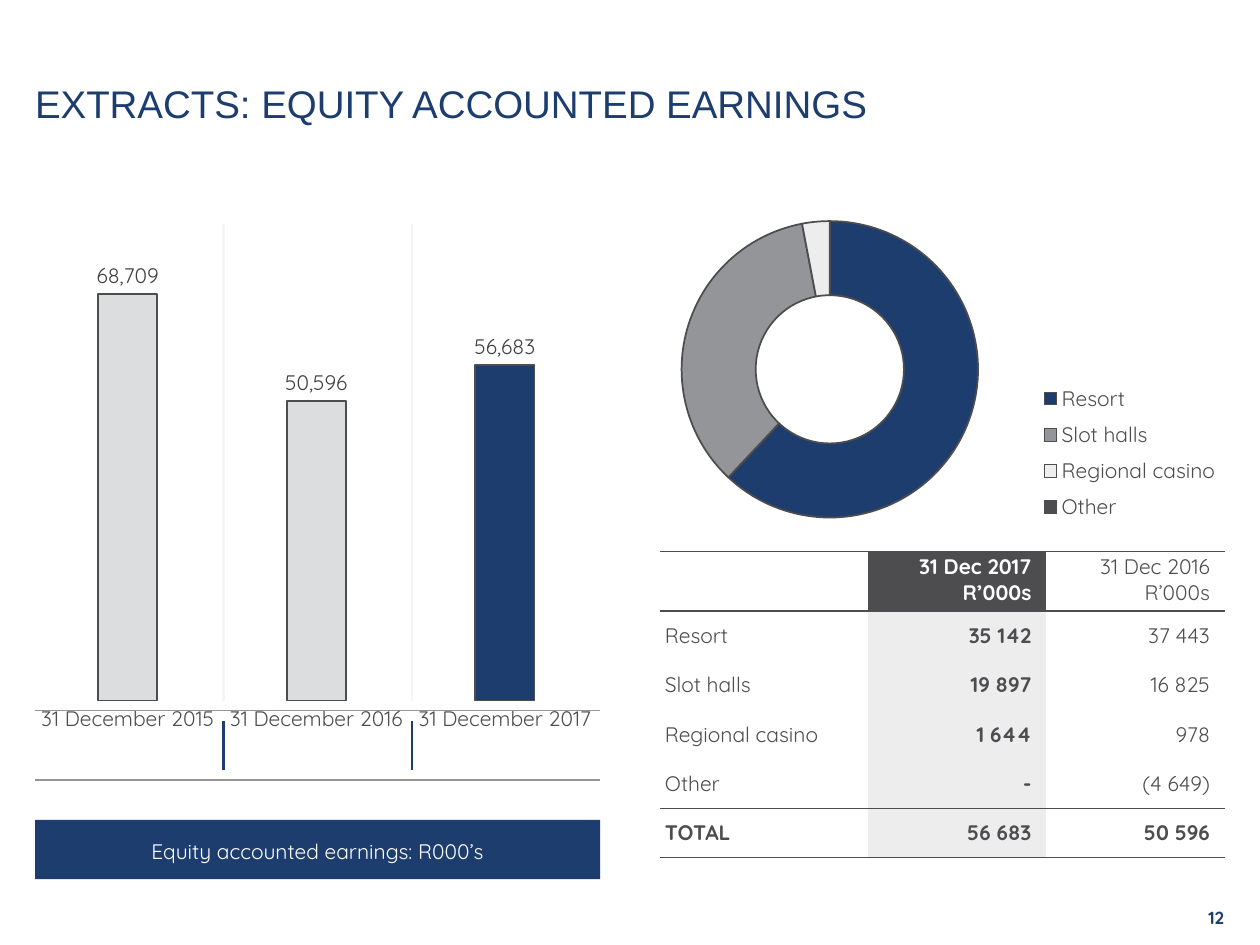
from lxml import etree
from pptx import Presentation
from pptx.chart.data import CategoryChartData
from pptx.dml.color import RGBColor
from pptx.enum.chart import (XL_CHART_TYPE, XL_LABEL_POSITION, XL_LEGEND_POSITION,
                             XL_TICK_LABEL_POSITION, XL_TICK_MARK)
from pptx.enum.shapes import MSO_CONNECTOR, MSO_SHAPE
from pptx.enum.text import MSO_ANCHOR, MSO_AUTO_SIZE, PP_ALIGN
from pptx.oxml import parse_xml
from pptx.oxml.ns import nsdecls, qn
from pptx.util import Pt

COLUMN, RING = XL_CHART_TYPE.COLUMN_CLUSTERED, XL_CHART_TYPE.DOUGHNUT
OUT_END, BESIDE = XL_LABEL_POSITION.OUTSIDE_END, XL_LEGEND_POSITION.RIGHT
NO_LABEL, NO_TICK = XL_TICK_LABEL_POSITION.NONE, XL_TICK_MARK.NONE
STRAIGHT, RECT = MSO_CONNECTOR.STRAIGHT, MSO_SHAPE.RECTANGLE
MIDDLE, BOTTOM = MSO_ANCHOR.MIDDLE, MSO_ANCHOR.BOTTOM
LEFT, CENTER, RIGHT = PP_ALIGN.LEFT, PP_ALIGN.CENTER, PP_ALIGN.RIGHT
NO_FIT = MSO_AUTO_SIZE.NONE

NAVY = RGBColor(0x1D, 0x3D, 0x6F)
DARK = RGBColor(0x4D, 0x4D, 0x4F)
GREY = RGBColor(0x94, 0x95, 0x99)
SILVER = RGBColor(0xDC, 0xDD, 0xDE)
PALE = RGBColor(0xED, 0xED, 0xEE)
FAINT = RGBColor(0xF4, 0xF5, 0xF5)
LABEL = RGBColor(0x40, 0x40, 0x40)
WHITE = RGBColor(0xFF, 0xFF, 0xFF)
FACE = "Quicksand"

TITLE = "EXTRACTS: EQUITY ACCOUNTED EARNINGS"
BANNER = "Equity accounted earnings: R000’s"
PAGE = "12"
NAMES = ["Resort", "Slot halls", "Regional casino", "Other"]
YEARS = [("31 December 2015", 68709, SILVER),
         ("31 December 2016", 50596, SILVER),
         ("31 December 2017", 56683, NAVY)]
SHARES = list(zip(NAMES, [62, 35, 3, None], [NAVY, GREY, PALE, DARK]))
FIGURES = [("35 142", "37 443"), ("19 897", "16 825"), ("1 644", "978"), ("-", "(4 649)")]
ROWS = [("", "31 Dec 2017\nR’000s", "31 Dec 2016 R’000s"),
        *[(name, *pair) for name, pair in zip(NAMES, FIGURES)],
        ("TOTAL", "56 683", "50 596")]

EDGE, SPAN, SPLIT = 20, 323, 377
COLS = [119, 102, 102]
HEAD, ROW = 34, 28.2
RULES = {0, 1, len(ROWS) - 1, len(ROWS)}


def put(item, **values):
    for key, value in values.items():
        setattr(item, key, value)


def style(font, color, size=12, name=FACE, bold=False):
    put(font, size=Pt(size), name=name, bold=bold)
    font.color.rgb = color


def frame(box, text, color, align, anchor, **look):
    area = box.text_frame
    put(area, text=text, word_wrap=True, auto_size=NO_FIT, vertical_anchor=anchor,
        margin_left=0, margin_right=0, margin_top=0, margin_bottom=0)
    para = area.paragraphs[0]
    para.alignment = align
    style(para.font, color, **look)
    return para


def rule(shapes, x, y, end, base, color, width):
    line = shapes.add_connector(STRAIGHT, Pt(x), Pt(y), Pt(end), Pt(base))
    line.line.color.rgb = color
    line.line.width = Pt(width)
    etree.SubElement(line._element.spPr, qn("a:effectLst"))


def place(owner, box, inner=False):
    old = owner.find(qn("c:layout"))
    if old is not None:
        owner.remove(old)
    target = '<c:layoutTarget val="inner"/>' if inner else ""
    modes = '<c:xMode val="edge"/><c:yMode val="edge"/>'
    sizes = "".join(f'<c:{key} val="{part}"/>' for key, part in zip("xywh", box))
    node = parse_xml(f'<c:layout {nsdecls("c")}><c:manualLayout>{target}{modes}{sizes}'
                     '</c:manualLayout></c:layout>')
    spot = owner.findall(qn("c:legendPos")) + owner.findall(qn("c:legendEntry"))
    owner.insert(len(spot), node)


def draw(shapes, kind, items, box, area):
    data = CategoryChartData()
    data.categories = [item[0] for item in items]
    data.add_series("Series 1", [item[1] for item in items])
    chart = shapes.add_chart(kind, *map(Pt, box), data).chart
    put(chart, has_title=False, has_legend=False)
    style(chart.font, DARK)
    place(chart._chartSpace.chart.plotArea, area, True)
    chart.plots[0].vary_by_categories = kind == RING
    points = chart.plots[0].series[0].points
    for i, item in enumerate(items):
        look = points[i].format
        look.fill.solid()
        look.fill.fore_color.rgb = item[2]
        look.line.color.rgb = DARK
        look.line.width = Pt(1)
    return chart


def draw_years(shapes):
    chart = draw(shapes, COLUMN, YEARS, (8.6, 110, 351.4, 392.4), (0.03, 0.05, 0.92, 0.69))
    plot = chart.plots[0]
    put(plot, gap_width=219, overlap=-27, has_data_labels=True)
    put(plot.data_labels, show_value=True, number_format="#,##0",
        number_format_is_linked=False, position=OUT_END)
    style(plot.data_labels.font, LABEL)
    for axis in (chart.category_axis, chart.value_axis):
        put(axis, major_tick_mark=NO_TICK, minor_tick_mark=NO_TICK, has_major_gridlines=False)
        axis.format.line.fill.background()
        style(axis.tick_labels.font, DARK)
    put(chart.value_axis, minimum_scale=0, maximum_scale=80000, tick_label_position=NO_LABEL)


def draw_shares(shapes):
    chart = draw(shapes, RING, SHARES, (360, 77, 357, 353), (0.08, 0.14, 0.48, 0.48))
    chart.has_legend = True
    put(chart.legend, position=BESIDE, include_in_layout=False)
    style(chart.legend.font, DARK)
    place(chart.legend._element, (0.63, 0.39, 0.34, 0.25))
    hole = chart.plots[0]._element.find(qn("c:holeSize"))
    hole.set("val", "61")


def border(cell, row):
    props = cell._tc.get_or_add_tcPr()
    for side, on in (("L", False), ("R", False), ("T", row in RULES), ("B", row + 1 in RULES)):
        line = etree.SubElement(props, qn(f"a:ln{side}"), w="12700")
        if on:
            fill = etree.SubElement(line, qn("a:solidFill"))
            etree.SubElement(fill, qn("a:srgbClr"), val=str(DARK))
        else:
            etree.SubElement(line, qn("a:noFill"))


def fill_cell(cell, text, r, c):
    head, total = r == 0, r == len(ROWS) - 1
    border(cell, r)
    if c == 1:
        cell.fill.solid()
        cell.fill.fore_color.rgb = DARK if head else PALE
    else:
        cell.fill.background()
    put(cell, text=text, vertical_anchor=BOTTOM if head else MIDDLE,
        margin_left=Pt(0 if c else 3), margin_right=Pt(8.6 if c else 0),
        margin_top=0, margin_bottom=Pt(3 if head else 0))
    for para in cell.text_frame.paragraphs:
        para.alignment = RIGHT if c else LEFT
        style(para.font, WHITE if head and c == 1 else DARK, bold=c == 1 or total)


def draw_table(shapes):
    high = HEAD + ROW * (len(ROWS) - 1)
    grid = shapes.add_table(len(ROWS), len(COLS), Pt(SPLIT), Pt(315.2), Pt(SPAN), Pt(high)).table
    put(grid, first_row=False, horz_banding=False)
    for c, wide in enumerate(COLS):
        grid.columns[c].width = Pt(wide)
    for r, row in enumerate(ROWS):
        grid.rows[r].height = Pt(ROW if r else HEAD)
        for c, text in enumerate(row):
            fill_cell(grid.cell(r, c), text, r, c)


def main():
    deck = Presentation()
    put(deck, slide_width=Pt(720), slide_height=Pt(540))
    slide = deck.slides.add_slide(deck.slide_layouts[5])
    shapes = slide.shapes

    title = shapes.title
    put(title, left=Pt(EDGE), top=Pt(9.4), width=Pt(578), height=Pt(62.6))
    frame(title, TITLE, NAVY, LEFT, BOTTOM, size=22, name="Arial")

    draw_shares(shapes)
    draw_years(shapes)

    banner = shapes.add_shape(RECT, Pt(EDGE), Pt(468.6), Pt(SPAN), Pt(33.8))
    banner.shadow.inherit = False
    banner.fill.solid()
    banner.fill.fore_color.rgb = NAVY
    banner.line.fill.background()
    para = frame(banner, BANNER, WHITE, CENTER, MIDDLE)
    put(para, line_spacing=1.1, space_after=Pt(1))

    for y in (406, 445.6):
        rule(shapes, EDGE, y, EDGE + SPAN, y, GREY, 1)
    for i in range(1, len(YEARS)):
        x = EDGE + SPAN * i / len(YEARS)
        rule(shapes, x, 412, x, 440, NAVY, 1.5)
        rule(shapes, x, 128, x, 400.4, FAINT, 1.5)

    draw_table(shapes)
    page = shapes.add_textbox(Pt(665), Pt(508.4), Pt(34.4), Pt(31.6))
    frame(page, PAGE, NAVY, RIGHT, MIDDLE, size=10, bold=True)
    deck.save("out.pptx")


if __name__ == "__main__":
    main()
